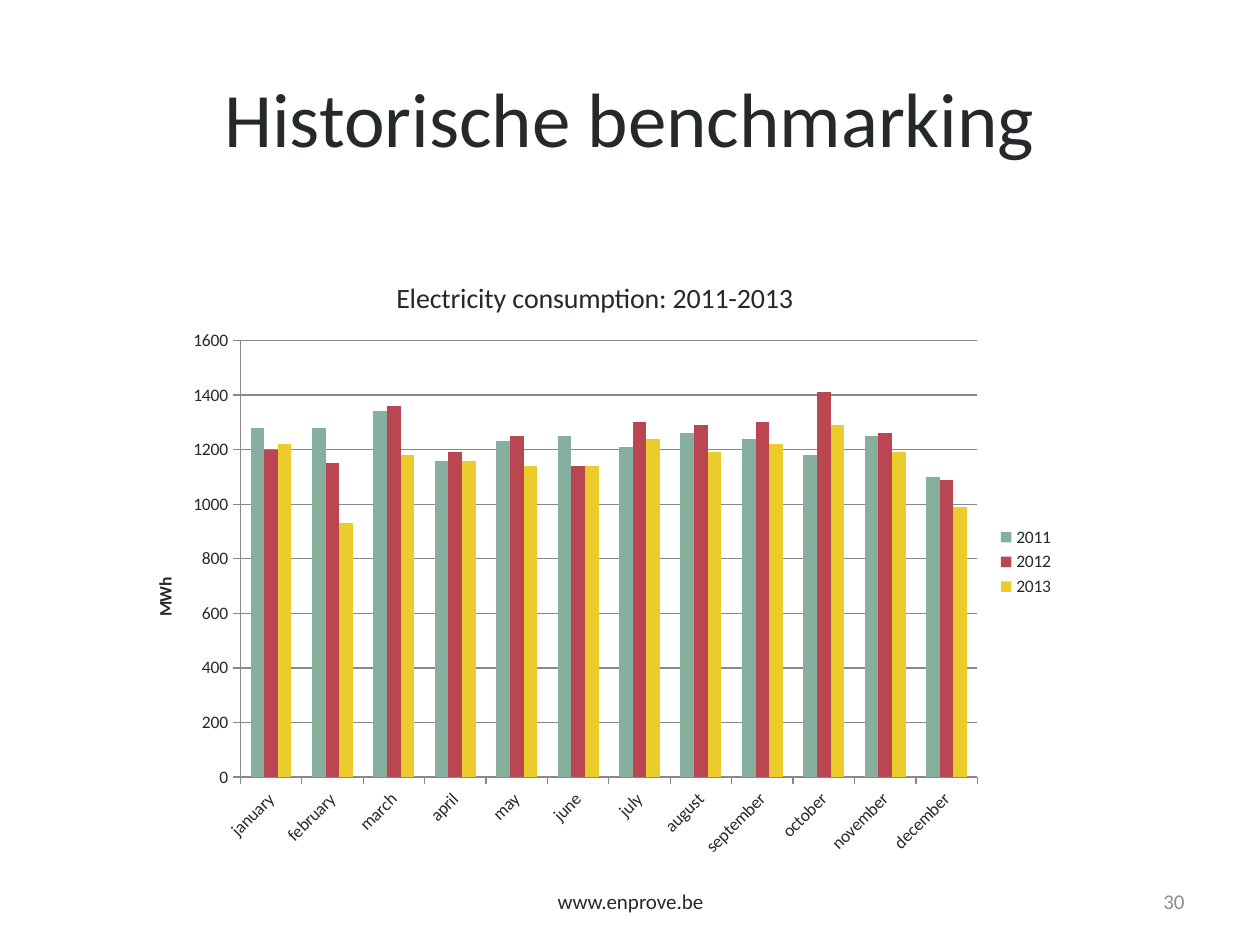
import pptx
import pptx.chart.data
import pptx.dml.color
import pptx.enum.chart
import pptx.enum.text
import pptx.oxml
import pptx.oxml.ns
import pptx.util
from pptx.util import Inches

FONT = "Calibri"
INK = pptx.dml.color.RGBColor(0x26, 0x29, 0x2C)
MUTED = pptx.dml.color.RGBColor(0x8E, 0x8E, 0x8F)
GRID = pptx.dml.color.RGBColor(0x8A, 0x88, 0x8A)
GREEN = pptx.dml.color.RGBColor(0x86, 0xB0, 0x9D)
RED = pptx.dml.color.RGBColor(0xBA, 0x46, 0x51)
YELLOW = pptx.dml.color.RGBColor(0xEC, 0xCC, 0x2C)

MONTHS = ["january", "february", "march", "april", "may", "june", "july",
          "august", "september", "october", "november", "december"]
CONSUMPTION = [
    ("2011", GREEN, [1280, 1280, 1340, 1160, 1230, 1250, 1210, 1260, 1240, 1180, 1250, 1100]),
    ("2012", RED, [1200, 1150, 1360, 1190, 1250, 1140, 1300, 1290, 1300, 1410, 1260, 1090]),
    ("2013", YELLOW, [1220, 930, 1180, 1160, 1140, 1140, 1240, 1190, 1220, 1290, 1190, 990]),
]


def set_font(font, size, color=INK, bold=False):
    font.name = FONT
    font.size = pptx.util.Pt(size)
    font.color.rgb = color
    font.bold = bold


def write_text(frame, text, size, align, color=INK, bold=False):
    frame.text = text
    paragraph = frame.paragraphs[0]
    paragraph.alignment = align
    set_font(paragraph.runs[0].font, size, color, bold)


def add_title(slide, text):
    title = slide.shapes.title
    title.left, title.top = Inches(0.5), Inches(0.3)
    title.width, title.height = Inches(9), Inches(1.25)
    title.text_frame.vertical_anchor = pptx.enum.text.MSO_ANCHOR.MIDDLE
    write_text(title.text_frame, text, 44, pptx.enum.text.PP_ALIGN.CENTER)


def add_footer(slide, text, left, width, align, color):
    footer = slide.shapes.add_textbox(Inches(left), Inches(6.95), Inches(width), Inches(0.4))
    footer.text_frame.word_wrap = True
    footer.text_frame.vertical_anchor = pptx.enum.text.MSO_ANCHOR.MIDDLE
    write_text(footer.text_frame, text, 12, align, color)


def set_layout(element, index, settings):
    for old in element.xpath("c:layout"):
        element.remove(old)
    values = "".join(f'<c:{name} val="{value}"/>' for name, value in settings.items())
    element.insert(index, pptx.oxml.parse_xml(
        f'<c:layout {pptx.oxml.ns.nsdecls("c")}>'
        f'<c:manualLayout>{values}</c:manualLayout></c:layout>'))


def rotate_text(element, path, degrees):
    body = element.xpath(path)[0]
    body.set("rot", str(degrees * 60000))
    body.set("vert", "horz")


def style_line(line):
    line.color.rgb = GRID
    line.width = pptx.util.Pt(0.75)


def style_axes(chart):
    months, energy = chart.category_axis, chart.value_axis
    for axis in (months, energy):
        axis.major_tick_mark = pptx.enum.chart.XL_TICK_MARK.OUTSIDE
        axis.minor_tick_mark = pptx.enum.chart.XL_TICK_MARK.NONE
        style_line(axis.format.line)
        set_font(axis.tick_labels.font, 10)
    rotate_text(chart.element, ".//c:catAx/c:txPr/a:bodyPr", -45)

    energy.minimum_scale, energy.maximum_scale, energy.major_unit = 0, 1600, 200
    energy.has_major_gridlines = True
    style_line(energy.major_gridlines.format.line)
    write_text(energy.axis_title.text_frame, "MWh", 10,
               pptx.enum.text.PP_ALIGN.CENTER, bold=True)
    rotate_text(chart.element, ".//c:valAx/c:title/c:tx/c:rich/a:bodyPr", -90)
    set_layout(chart.element.xpath(".//c:valAx/c:title")[0], 1,
               {"xMode": "edge", "yMode": "edge", "x": 0.03, "y": 0.52})


def add_consumption_chart(slide):
    data = pptx.chart.data.CategoryChartData()
    data.categories = MONTHS
    for year, _, values in CONSUMPTION:
        data.add_series(year, values)
    chart = slide.shapes.add_chart(
        pptx.enum.chart.XL_CHART_TYPE.COLUMN_CLUSTERED,
        Inches(0.97), Inches(2.02), Inches(7.5), Inches(4.88), data).chart
    set_font(chart.font, 10)

    chart.has_title = True
    write_text(chart.chart_title.text_frame, "Electricity consumption: 2011-2013", 16,
               pptx.enum.text.PP_ALIGN.CENTER)
    chart.has_legend = True
    chart.legend.position = pptx.enum.chart.XL_LEGEND_POSITION.RIGHT
    chart.legend.include_in_layout = False
    set_font(chart.legend.font, 10)

    plot = chart.plots[0]
    plot.gap_width, plot.overlap = 150, 0
    plot.vary_by_categories = False
    for series, (_, color, _) in zip(plot.series, CONSUMPTION):
        series.format.fill.solid()
        series.format.fill.fore_color.rgb = color
    style_axes(chart)
    set_layout(chart.element.xpath(".//c:plotArea")[0], 0,
               {"layoutTarget": "inner", "xMode": "edge", "yMode": "edge",
                "x": 0.125, "y": 0.14, "w": 0.78, "h": 0.71})


def main():
    presentation = pptx.Presentation()
    presentation.slide_width, presentation.slide_height = Inches(10), Inches(7.5)
    slide = presentation.slides.add_slide(presentation.slide_layouts[5])
    add_footer(slide, "www.enprove.be", 3.42, 3.17, pptx.enum.text.PP_ALIGN.CENTER, INK)
    add_footer(slide, "30", 7.17, 2.33, pptx.enum.text.PP_ALIGN.RIGHT, MUTED)
    add_title(slide, "Historische benchmarking")
    add_consumption_chart(slide)
    presentation.save("out.pptx")


if __name__ == "__main__":
    main()
